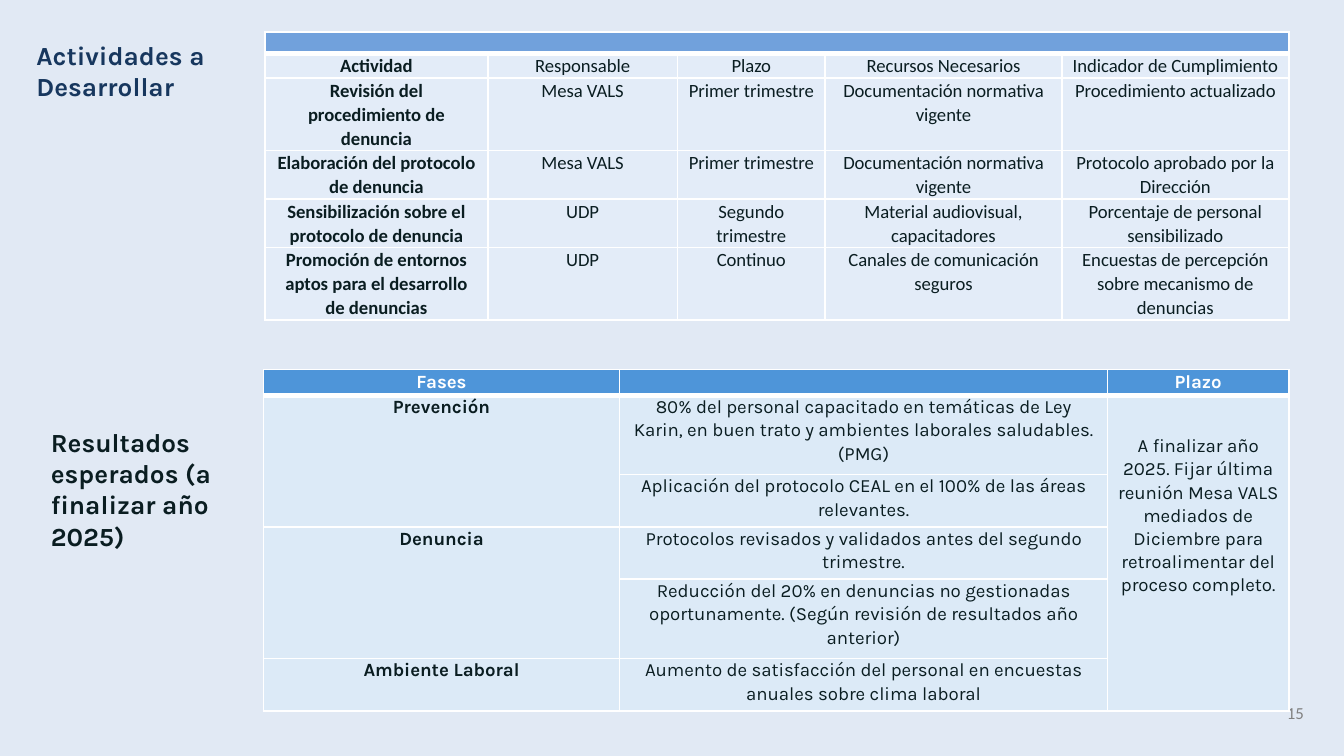
from lxml.etree import SubElement
from pptx import Presentation
from pptx.dml.color import RGBColor
from pptx.enum.text import MSO_ANCHOR as Anchor, MSO_AUTO_SIZE as AutoSize, PP_ALIGN as Align
from pptx.oxml.ns import qn
from pptx.util import Inches, Pt

color = RGBColor.from_string
WHITE, INK = "FFFFFF", "0A1D21"


def write(frame, text, hex_color, font, paragraph):
    """Put one formatted paragraph in a text frame."""
    para = frame.paragraphs[0]
    for name, value in paragraph.items():
        setattr(para, name, value)
    span = para.add_run()
    span.text = text
    for name, value in font.items():
        setattr(span.font, name, value)
    span.font.color.rgb = color(hex_color)


def draw_table(place, widths, heights, rows, merges, font, header_fill, body_fill):
    """Build a table with a coloured first row, bold first column and white rules."""
    left, top = place
    table = page.shapes.add_table(
        len(heights), len(widths), Inches(left), Inches(top),
        Inches(sum(widths)), Inches(sum(heights))).table
    table.horz_banding = False
    for column, width in zip(table.columns, widths):
        column.width = Inches(width)
    for row, height in zip(table.rows, heights):
        row.height = Inches(height)
    for first, last in merges:
        table.cell(*first).merge(table.cell(*last))

    for r, texts in enumerate(rows):
        for c, text in enumerate(texts):
            cell = table.cell(r, c)
            for name, value in cell_margins.items():
                setattr(cell, name, Inches(value))
            # White borders, thicker under the header
            properties = cell._tc.get_or_add_tcPr()
            for side in "LRTB":
                thick = (r, side) in ((0, "B"), (1, "T"))
                line = SubElement(properties, qn(f"a:ln{side}"), w=str(Pt(3 if thick else 1)))
                fill = SubElement(line, qn("a:solidFill"))
                SubElement(fill, qn("a:srgbClr"), val=WHITE)
            cell.fill.solid()
            cell.fill.fore_color.rgb = color(body_fill if r else header_fill)
            if text:
                bold = r == 0 or c == 0 if font["name"] == "Karla" else c == 0
                write(cell.text_frame, text, INK if r else WHITE,
                      {**font, "bold": bold}, cell_paragraph)
            else:
                # Keep empty cells from stretching their row
                SubElement(cell.text_frame.paragraphs[0]._p, qn("a:endParaRPr"), sz="600")
    return table


cell_margins = {"margin_left": 0.07, "margin_right": 0.07, "margin_top": 0, "margin_bottom": 0}
cell_paragraph = {"alignment": Align.CENTER, "line_spacing": 1.07, "space_after": Pt(8)}
heading_font = {"name": "Karla", "size": Pt(14), "bold": True}

# Widescreen page, 16:9
deck = Presentation()
deck.slide_width = Inches(10)
deck.slide_height = Inches(10 * 9 / 16)
page = deck.slides.add_slide(deck.slide_layouts[5])
page.background.fill.solid()
page.background.fill.fore_color.rgb = color("E1E9F4")

# Headings and page number
title = page.shapes.title
results = page.shapes.add_textbox(0, 0, 0, 0)
number = page.shapes.add_textbox(0, 0, 0, 0)
number_font = {"name": "Calibri", "size": Pt(9)}
for box, place, text, hex_color, font, align, anchor in (
    (title, (0.17, 0.24, 2.06, 0.57), "Actividades a Desarrollar", "17375E",
     heading_font, Align.LEFT, Anchor.TOP),
    (results, (0.28, 3.12, 1.7, 1.04), "Resultados esperados (a finalizar año 2025)", INK,
     heading_font, Align.LEFT, Anchor.TOP),
    (number, (7.47, 5.19, 2.33, 0.23), "15", "808080",
     number_font, Align.RIGHT, Anchor.MIDDLE),
):
    box.left, box.top, box.width, box.height = map(Inches, place)
    frame = box.text_frame
    frame.word_wrap = True
    frame.auto_size = AutoSize.NONE
    frame.vertical_anchor = anchor
    write(frame, text, hex_color, font, {"alignment": align})

# Activities table
activities = [
    [""] * 5,
    ["Actividad", "Responsable", "Plazo", "Recursos Necesarios", "Indicador de Cumplimiento"],
    ["Revisión del procedimiento de denuncia", "Mesa VALS", "Primer trimestre",
     "Documentación normativa vigente", "Procedimiento actualizado"],
    ["Elaboración del protocolo de denuncia", "Mesa VALS", "Primer trimestre",
     "Documentación normativa vigente", "Protocolo aprobado por la Dirección"],
    ["Sensibilización sobre el protocolo de denuncia", "UDP", "Segundo trimestre",
     "Material audiovisual, capacitadores", "Porcentaje de personal sensibilizado"],
    ["Promoción de entornos aptos para el desarrollo de denuncias", "UDP", "Continuo",
     "Canales de comunicación seguros", "Encuestas de percepción sobre mecanismo de denuncias"],
]
draw_table((1.97, 0.24), [1.66, 1.41, 1.1, 1.76, 1.69], [0.16, 0.18, 0.54, 0.36, 0.36, 0.54],
           activities, [((0, 0), (0, 4))], {"name": "Calibri", "size": Pt(10)},
           "71A1DC", "E3ECF8")

# Expected results table
phases = [
    ["Fases", "", "Plazo"],
    ["Prevención",
     "80% del personal capacitado en temáticas de Ley Karin, en buen trato y ambientes "
     "laborales saludables. (PMG)",
     "A finalizar año 2025. Fijar última reunión Mesa VALS mediados de Diciembre para "
     "retroalimentar del proceso completo."],
    ["", "Aplicación del protocolo CEAL en el 100% de las áreas relevantes.", ""],
    ["Denuncia", "Protocolos revisados y validados antes del segundo trimestre.", ""],
    ["", "Reducción del 20% en denuncias no gestionadas oportunamente. "
     "(Según revisión de resultados año anterior)", ""],
    ["Ambiente Laboral",
     "Aumento de satisfacción del personal en encuestas anuales sobre clima laboral", ""],
]
results_table = draw_table(
    (1.96, 2.75), [2.65, 3.63, 1.35], [0.19, 0.59, 0.39, 0.39, 0.59, 0.39], phases,
    [((1, 0), (2, 0)), ((3, 0), (4, 0)), ((1, 2), (5, 2))],
    {"name": "Karla", "size": Pt(10)}, "4E95D9", "DCEAF7")

# Room for the longest goal to wrap and for the deadline to sit lower
goal, deadline = results_table.cell(1, 1), results_table.cell(1, 2)
goal.margin_left = goal.margin_right = Inches(0.09)
deadline.margin_top = Inches(0.29)

deck.save("out.pptx")
